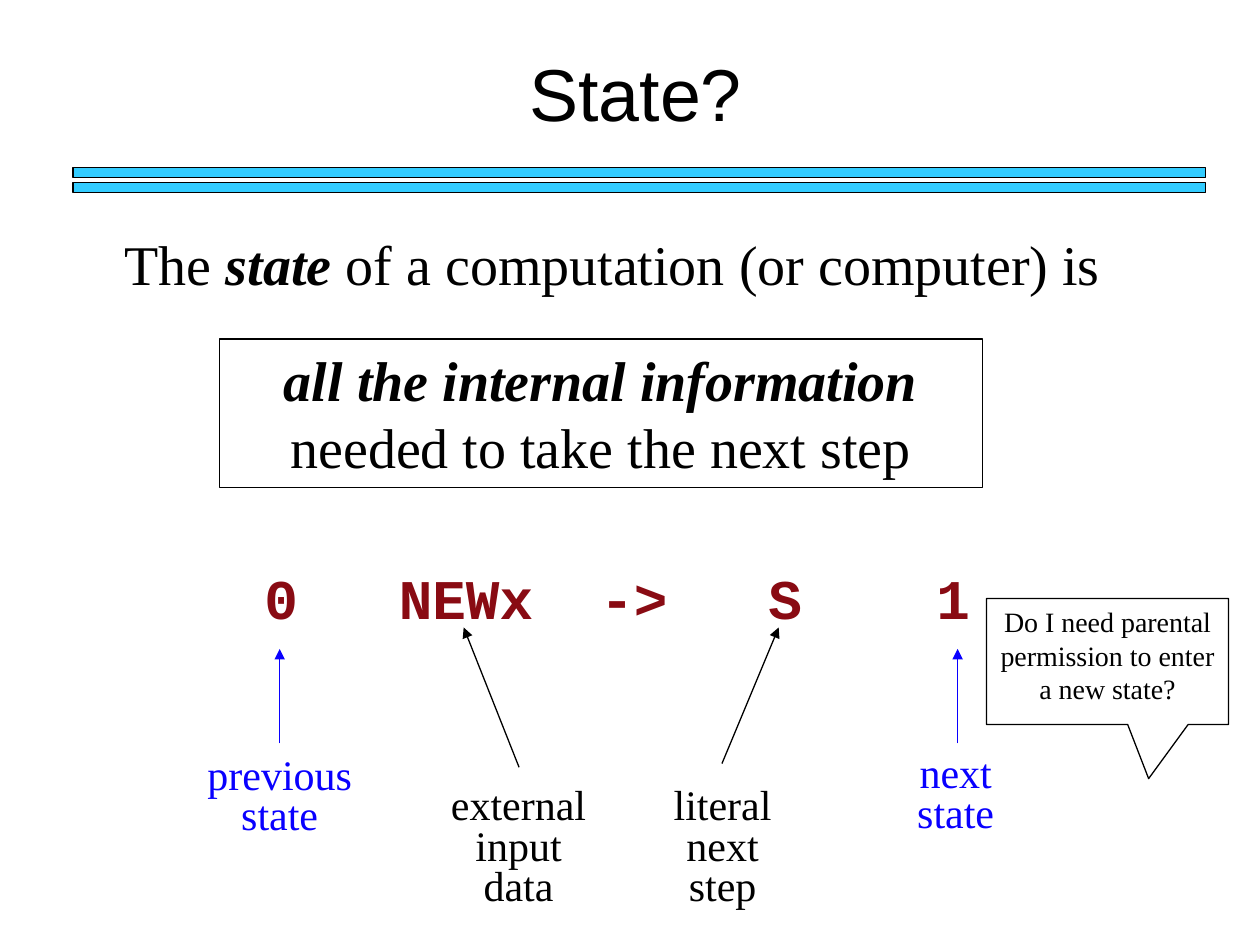
from dataclasses import dataclass
from typing import Optional

from lxml import etree
from pptx import Presentation
from pptx.dml.color import RGBColor
from pptx.enum.shapes import MSO_CONNECTOR as CONN, MSO_SHAPE as SHAPE
from pptx.enum.text import MSO_ANCHOR as ANCHOR, PP_ALIGN as ALIGN
from pptx.oxml.ns import qn
from pptx.util import Inches, Pt

COLORS = {"black": "000000", "bar": "33CCFF", "blue": "0900FF", "code": "890B13"}
SERIF = "Times New Roman"
CHAR_WIDTH = 32 * 0.6 / 72


@dataclass
class Run:
    text: str
    strong: bool = False


@dataclass
class Text:
    runs: list[Run]
    size: int
    font: str = SERIF
    color: str = "black"
    align: ALIGN = ALIGN.CENTER
    spacing: Optional[float] = None


@dataclass
class Label:
    text: str
    box: tuple[float, float, float, float]
    start: tuple[float, float]
    end: tuple[float, float]
    color: str


LABELS = [
    Label("previous state", (1.54, 5.97, 1.36, 0.74), (2.22, 5.9), (2.22, 5.15), "blue"),
    Label("next state", (7.01, 5.95, 1.15, 0.74), (7.6, 5.9), (7.6, 5.15), "blue"),
    Label("external input data", (3.44, 6.21, 1.35, 1.06), (4.12, 6.09), (3.68, 4.98), "black"),
    Label("literal next step", (5.16, 6.21, 1.15, 1.06), (5.73, 6.06), (6.18, 4.98), "black"),
]


def rgb(name: str) -> RGBColor:
    """Look up a named colour."""
    return RGBColor.from_string(COLORS[name])


def write(sp, text: Text):
    """Fill a shape with one paragraph and return the paragraph."""
    tf = sp.text_frame
    tf.word_wrap = True
    tf.vertical_anchor = ANCHOR.TOP
    p = tf.paragraphs[0]
    p.alignment = text.align
    if text.spacing:
        p.line_spacing = text.spacing
    p.font.name, p.font.size = text.font, Pt(text.size)
    p.font.color.rgb = rgb(text.color)
    for run in text.runs:
        r = p.add_run()
        r.text = run.text
        if run.strong:
            r.font.bold = r.font.italic = True
    return p


def add_text(s, box: tuple, text: Text):
    """Add a text box and return its paragraph."""
    return write(s.shapes.add_textbox(*map(Inches, box)), text)


def add_outlined(s, kind: SHAPE, box: tuple, fill: Optional[str] = None):
    """Add a thinly outlined preset shape."""
    sp = s.shapes.add_shape(kind, *map(Inches, box))
    sp.shadow.inherit = False
    if fill:
        sp.fill.solid()
        sp.fill.fore_color.rgb = rgb(fill)
    else:
        sp.fill.background()
    sp.line.color.rgb = rgb("black")
    sp.line.width = Pt(0.75)
    return sp


def add_arrow(s, start: tuple, end: tuple, color: str) -> None:
    """Draw a straight arrow pointing at its end."""
    line = s.shapes.add_connector(CONN.STRAIGHT, *map(Inches, start + end))
    line.line.color.rgb = rgb(color)
    line.line.width = Pt(0.75)
    etree.SubElement(line.line._get_or_add_ln(), qn("a:tailEnd"), type="triangle")
    etree.SubElement(line._element.spPr, qn("a:effectLst"))


def add_tab_stops(p, columns: list[int]) -> None:
    """Set left tab stops at character columns."""
    pPr = p._p.get_or_add_pPr()
    tabs = etree.Element(qn("a:tabLst"))
    for column in columns:
        etree.SubElement(tabs, qn("a:tab"), pos=str(Inches(column * CHAR_WIDTH)), algn="l")
    pPr.find(qn("a:defRPr")).addprevious(tabs)


def main() -> None:
    """Build the slide."""
    prs = Presentation()
    prs.slide_width, prs.slide_height = Inches(10), Inches(7.5)
    s = prs.slides.add_slide(prs.slide_layouts[6])

    for top in (1.33, 1.45):
        add_outlined(s, SHAPE.RECTANGLE, (0.58, top, 8.99, 0.08), "bar")
    add_text(s, (1.92, 0.33, 6.25, 0.8), Text([Run("State?")], 42, "Arial"))

    intro = [Run("The "), Run("state", True), Run(" of a computation (or computer) is")]
    add_text(s, (0.89, 1.77, 8.66, 0.63), Text(intro, 32, align=ALIGN.LEFT))

    definition = [Run("all the internal information ", True), Run("needed to take the next step")]
    write(add_outlined(s, SHAPE.RECTANGLE, (1.74, 2.69, 6.06, 1.18)), Text(definition, 32))

    rule = Text([Run("0\tNEWx\t->\tS\t1")], 32, "Courier New", "code", ALIGN.LEFT)
    p = add_text(s, (2, 4.42, 7.75, 0.63), rule)
    p.font.bold = True
    add_tab_stops(p, [4, 10, 15, 20])

    for label in LABELS:
        add_arrow(s, label.start, label.end, label.color)
        add_text(s, label.box, Text([Run(label.text)], 24, color=label.color, spacing=0.8))

    callout = add_outlined(s, SHAPE.RECTANGULAR_CALLOUT, (7.83, 4.75, 1.92, 1))
    callout.adjustments[0], callout.adjustments[1] = 0.17, 0.93
    write(callout, Text([Run("Do I need parental permission to enter a new state?")], 16))

    prs.save("out.pptx")


if __name__ == "__main__":
    main()
